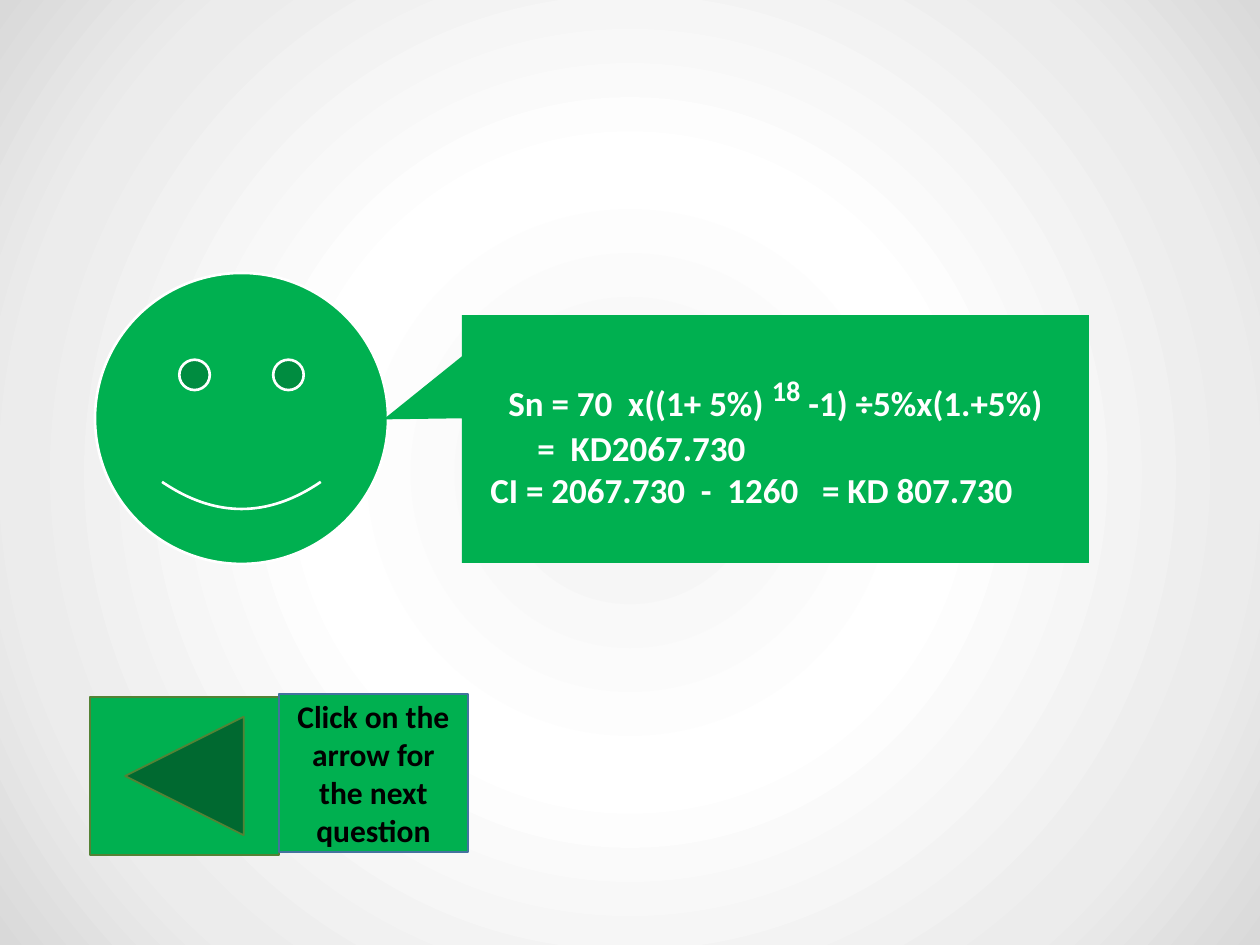
from dataclasses import dataclass
from typing import Optional

from lxml import etree
from pptx import Presentation
from pptx.dml.color import RGBColor
from pptx.enum.shapes import MSO_SHAPE
from pptx.enum.text import MSO_ANCHOR, PP_ALIGN
from pptx.oxml.ns import qn
from pptx.util import Pt

FACE = MSO_SHAPE.SMILEY_FACE
BACK = MSO_SHAPE.ACTION_BUTTON_BACK_OR_PREVIOUS
CALLOUT = MSO_SHAPE.RECTANGULAR_CALLOUT
PLATE = MSO_SHAPE.PENTAGON
LEFT, CENTER = PP_ALIGN.LEFT, PP_ALIGN.CENTER
MIDDLE = MSO_ANCHOR.MIDDLE

SCALE = 914400 / 126
FONT = "Calibri"
COLORS = {
    "green": "00B050",
    "moss": "548235",
    "blue": "43739E",
    "white": "FFFFFF",
    "black": "000000",
}
STOPS = ((0, "F2F2F2"), (39, "FFFFFF"), (78, "ECECEC"), (100, "D9D9D9"))


@dataclass
class Run:
    text: str
    size: int
    raised: int = 0


@dataclass
class Line:
    runs: tuple[Run, ...]
    align: int = LEFT
    indent: int = 0


@dataclass
class Item:
    kind: int
    box: tuple[int, int, int, int]
    adjust: tuple[float, ...] = ()
    edge: Optional[str] = None
    width: float = 1
    ink: str = "white"
    lines: tuple[Line, ...] = ()


ITEMS = (
    Item(FACE, (95, 273, 293, 291), (0.047,), "white", 1.5),
    Item(BACK, (90, 697, 189, 158), edge="moss"),
    Item(CALLOUT, (462, 315, 627, 248), (-0.625, -0.079), lines=(
        Line((Run("Sn = 70  x((1+ 5%) ", 20), Run("18", 28, 30),
              Run(" -1) ÷5%x(1.+5%)", 20)), CENTER),
        Line((Run("=  KD2067.730", 20),), indent=63),
        Line((Run("CI = 2067.730  -  1260   = KD 807.730", 20),), indent=16),
    )),
    Item(PLATE, (279, 694, 189, 158), (0,), "blue", ink="black", lines=(
        Line((Run("Click on the arrow for the next question", 18),), CENTER),
    )),
)


def emu(px: int) -> int:
    return round(px * SCALE)


def color(name: str) -> RGBColor:
    return RGBColor.from_string(COLORS[name])


def shade(slide) -> None:
    """Give the slide a radial gradient that starts at its centre."""
    fill = slide.background.fill
    fill.gradient()
    grad = slide.background._cSld.find(".//" + qn("a:gradFill"))
    for child in list(grad):
        grad.remove(child)
    stops = etree.SubElement(grad, qn("a:gsLst"))
    for pos, tint in STOPS:
        stop = etree.SubElement(stops, qn("a:gs"), pos=str(pos * 1000))
        etree.SubElement(stop, qn("a:srgbClr"), val=tint)
    ring = etree.SubElement(grad, qn("a:path"), path="circle")
    etree.SubElement(ring, qn("a:fillToRect"), l="50000", t="50000",
                     r="50000", b="50000")


def write(frame, lines: tuple[Line, ...], ink: str) -> None:
    frame.word_wrap = True
    frame.vertical_anchor = MIDDLE
    for i, line in enumerate(lines):
        para = frame.add_paragraph() if i else frame.paragraphs[0]
        para.alignment = line.align
        if line.indent:
            para._p.get_or_add_pPr().set("marL", str(emu(line.indent)))
        for part in line.runs:
            run = para.add_run()
            run.text = part.text
            font = run.font
            font.name, font.size, font.bold = FONT, Pt(part.size), True
            font.color.rgb = color(ink)
            if part.raised:
                run._r.get_or_add_rPr().set("baseline", str(part.raised * 1000))


def draw(slide, item: Item) -> None:
    shape = slide.shapes.add_shape(item.kind, *map(emu, item.box))
    shape.shadow.inherit = False
    for i, value in enumerate(item.adjust):
        shape.adjustments[i] = value
    shape.fill.solid()
    shape.fill.fore_color.rgb = color("green")
    if item.edge:
        shape.line.color.rgb = color(item.edge)
        shape.line.width = Pt(item.width)
    else:
        shape.line.fill.background()
    if item.lines:
        write(shape.text_frame, item.lines, item.ink)


def main() -> None:
    deck = Presentation()
    deck.slide_width, deck.slide_height = emu(1260), emu(945)
    slide = deck.slides.add_slide(deck.slide_layouts[6])
    shade(slide)
    for item in ITEMS:
        draw(slide, item)
    deck.save("out.pptx")


if __name__ == "__main__":
    main()
